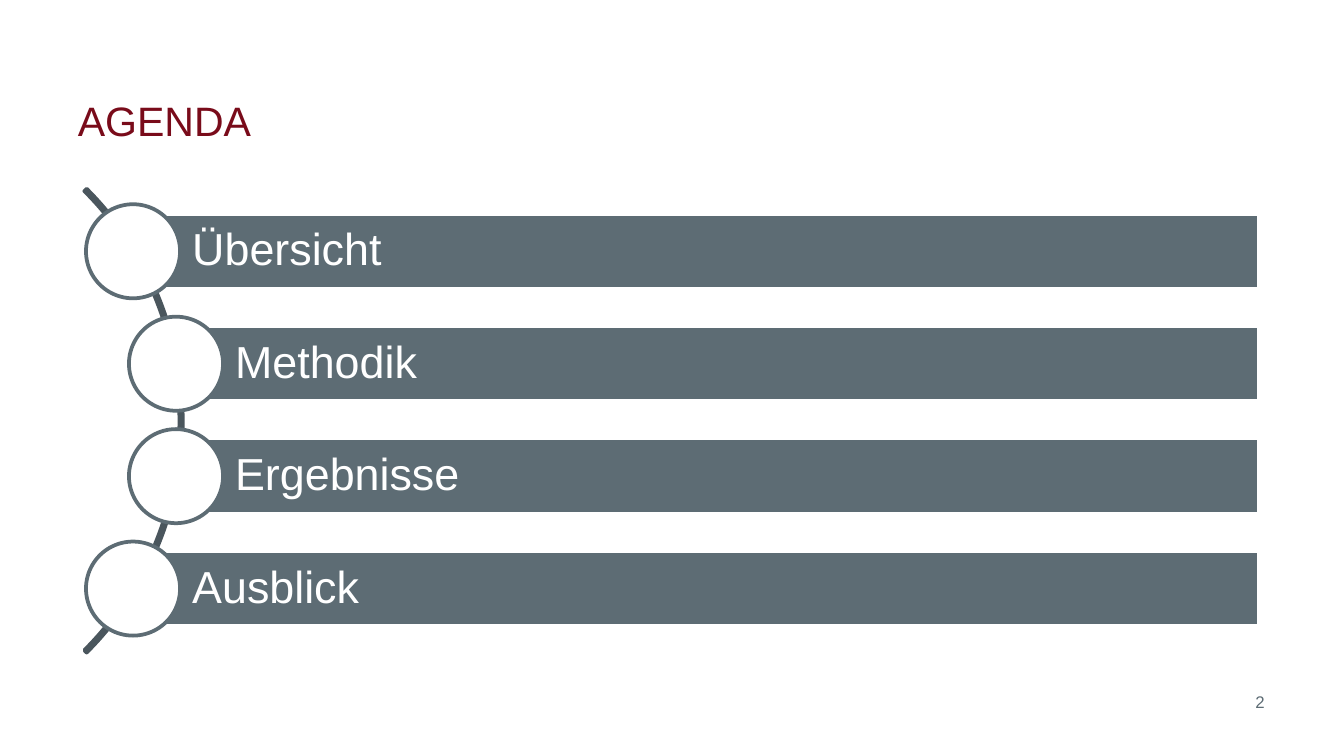
"""Build an agenda slide with four bars strung along an arc."""
import pptx
import pptx.dml.color
import pptx.enum.shapes
import pptx.enum.text
import pptx.util

Inches = pptx.util.Inches
Pt = pptx.util.Pt
Shape = pptx.enum.shapes.MSO_SHAPE
Anchor = pptx.enum.text.MSO_ANCHOR
Align = pptx.enum.text.PP_ALIGN

SLATE, DARK_SLATE, WINE, WHITE = "5D6C74", "4A565D", "790B1A", "FFFFFF"


def color(value):
    return pptx.dml.color.RGBColor.from_string(value)


def write(box, text, size, fill, font="Arial", align=Align.LEFT,
          anchor=Anchor.TOP, insets=(0, 0, 0, 0), spacing=1.0):
    frame = box.text_frame
    frame.word_wrap = True
    frame.auto_size = pptx.enum.text.MSO_AUTO_SIZE.NONE
    frame.vertical_anchor = anchor
    (frame.margin_left, frame.margin_top,
     frame.margin_right, frame.margin_bottom) = map(Inches, insets)
    para = frame.paragraphs[0]
    para.alignment = align
    para.line_spacing = spacing
    para.space_before = Pt(0)
    span = para.add_run()
    span.text = text
    span.font.name = font
    span.font.size = Pt(size)
    span.font.color.rgb = color(fill)


class AgendaPage:
    def __init__(self, deck):
        self.page = deck.slides.add_slide(deck.slide_layouts[5])
        self.line_width = Pt(2)

    def title(self, text, left, top, width, height):
        box = self.page.shapes.title
        box.left, box.top = Inches(left), Inches(top)
        box.width, box.height = Inches(width), Inches(height)
        write(box, text, 22, WINE, anchor=Anchor.BOTTOM)

    def shape(self, kind, left, top, width, height, line, fill=None):
        shape = self.page.shapes.add_shape(
            kind, Inches(left), Inches(top), Inches(width), Inches(height))
        shape.shadow.inherit = False
        if fill:
            shape.fill.solid()
            shape.fill.fore_color.rgb = color(fill)
        else:
            shape.fill.background()
        shape.line.color.rgb = color(line)
        shape.line.width = self.line_width
        return shape

    def arc(self, left, top, size):
        arc = self.shape(Shape.BLOCK_ARC, left, top, size, size, DARK_SLATE)
        for index, value in enumerate((189, 27, 0.005)):
            arc.adjustments[index] = value

    def entry(self, text, left, top, right=9.37, height=0.56, circle=0.7):
        bar = self.shape(Shape.RECTANGLE, left, top, right - left, height,
                         WHITE, SLATE)
        write(bar, text, 24, WHITE, anchor=Anchor.MIDDLE,
              insets=(0.44, 0.07, 0.07, 0.07), spacing=0.9)
        self.shape(Shape.OVAL, left - circle / 2, top + (height - circle) / 2,
                   circle, circle, SLATE, WHITE)

    def number(self, text, left, top, width, height):
        box = self.page.shapes.add_textbox(
            Inches(left), Inches(top), Inches(width), Inches(height))
        write(box, text, 9, SLATE, align=Align.RIGHT)


def main():
    deck = pptx.Presentation()
    deck.slide_width = Inches(10)
    deck.slide_height = deck.slide_width * 9 // 16
    agenda = AgendaPage(deck)
    agenda.title("AGENDA", 0.58, 0.29, 6.86, 0.79)
    agenda.arc(-3.52, 0.69, 4.88)
    entries = ("Übersicht", "Methodik", "Ergebnisse", "Ausblick")
    first_top, last_top = 1.59, 4.1
    last = len(entries) - 1
    pitch = (last_top - first_top) / last
    for row, text in enumerate(entries):
        left = 0.99 if row in (0, last) else 1.31
        agenda.entry(text, left, first_top + row * pitch)
    agenda.number("2", 7.42, 5.15, 1.99, 0.19)
    deck.save("out.pptx")


if __name__ == "__main__":
    main()
